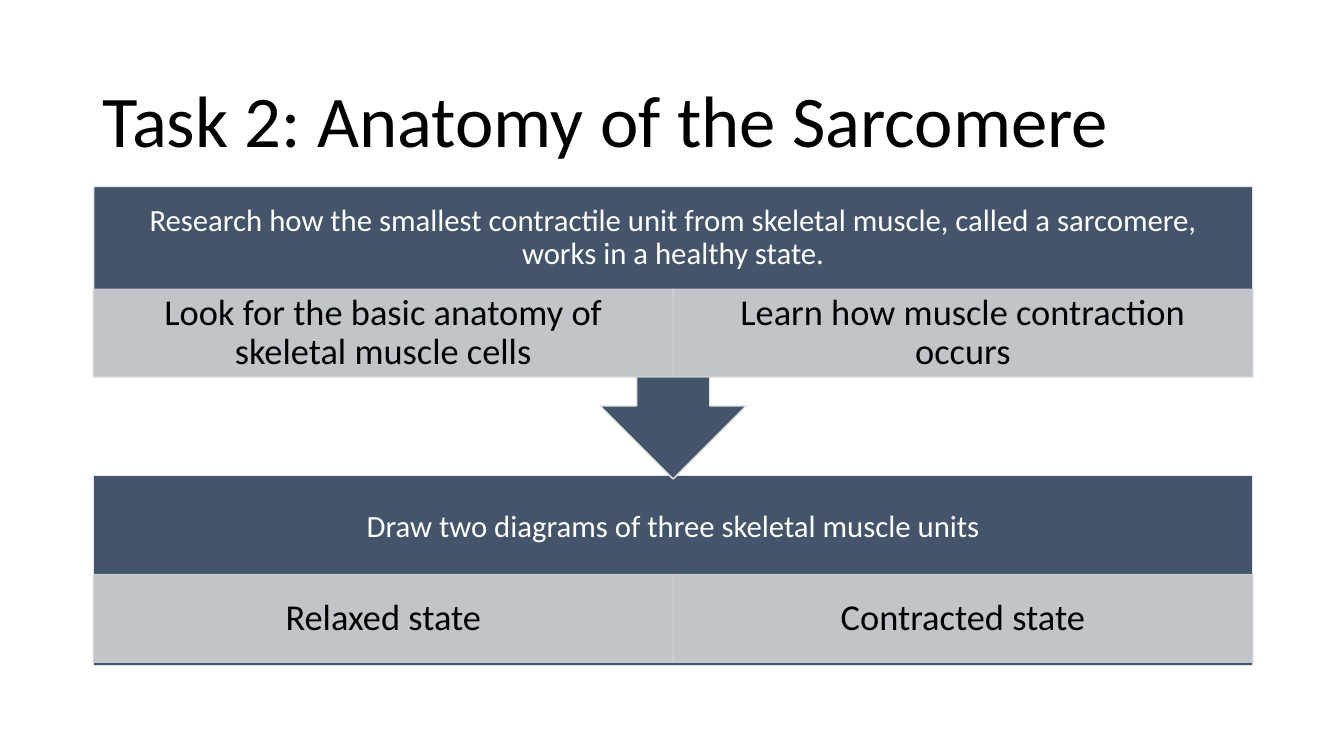
"""Build the sarcomere task slide: two header blocks linked by a down arrow."""
from lxml import etree
from pptx import Presentation
from pptx.dml.color import RGBColor
from pptx.enum.shapes import MSO_SHAPE
from pptx.enum.text import MSO_ANCHOR, PP_ALIGN
from pptx.oxml.ns import qn
from pptx.util import Cm, Pt

RECTANGLE = MSO_SHAPE.RECTANGLE
ARROW_CALLOUT = MSO_SHAPE.UP_ARROW_CALLOUT
MIDDLE = MSO_ANCHOR.MIDDLE
LEFT, CENTER = PP_ALIGN.LEFT, PP_ALIGN.CENTER

BLACK = RGBColor(0x00, 0x00, 0x00)
WHITE = RGBColor(0xFF, 0xFF, 0xFF)
SLATE = RGBColor(0x44, 0x54, 0x6A)
PALE = RGBColor(0xE7, 0xE6, 0xE6)
GREY = RGBColor(0xCF, 0xD1, 0xD4)

BLOCK_LEFT, BLOCK_WIDTH = 2.36, 29.21
HEADER_HEIGHT, CELL_HEIGHT = 2.59, 2.21


class TaskPage:
    def __init__(self, deck, font="Calibri"):
        self.font = font
        self.page = deck.slides.add_slide(deck.slide_layouts[6])

    def set_words(self, box, words, size, color, align, insets):
        frame = box.text_frame
        frame.text = words
        frame.word_wrap = True
        frame.vertical_anchor = MIDDLE
        frame.margin_left = frame.margin_right = Cm(insets[0])
        frame.margin_top = frame.margin_bottom = Cm(insets[1])
        para = frame.paragraphs[0]
        para.alignment = align
        para.line_spacing = 0.9
        for span in para.runs:
            span.font.name = self.font
            span.font.size = Pt(size)
            span.font.color.rgb = color

    def label(self, words, left, top, width, height, size, color, align, insets):
        box = self.page.shapes.add_textbox(Cm(left), Cm(top), Cm(width), Cm(height))
        self.set_words(box, words, size, color, align, insets)

    def panel(self, kind, left, top, width, height, fill, line):
        shape = self.page.shapes.add_shape(kind, Cm(left), Cm(top), Cm(width), Cm(height))
        shape.shadow.inherit = False
        shape.fill.solid()
        shape.fill.fore_color.rgb = fill
        shape.line.color.rgb = line
        shape.line.width = Pt(1)
        return shape

    def cell(self, words, left, top, width):
        shape = self.panel(RECTANGLE, left, top, width, CELL_HEIGHT, GREY, GREY)
        for color in shape._element.spPr.iter(qn("a:srgbClr")):
            etree.SubElement(color, qn("a:alpha")).set("val", "90000")
        self.set_words(shape, words, 26, BLACK, CENTER, (0.5, 0.1))

    def block(self, kind, top, height, rotation, header, cells_top, cells):
        panel = self.panel(kind, BLOCK_LEFT, top, BLOCK_WIDTH, height, SLATE, PALE)
        panel.rotation = rotation
        self.label(header, BLOCK_LEFT, top, BLOCK_WIDTH, HEADER_HEIGHT,
                   22, WHITE, CENTER, (0.43, 0.43))
        width = BLOCK_WIDTH / len(cells)
        for column, words in enumerate(cells):
            self.cell(words, BLOCK_LEFT + column * width, cells_top, width)


def main():
    deck = Presentation()
    deck.slide_width, deck.slide_height = Cm(33.87), Cm(19.05)
    task = TaskPage(deck)
    task.label("Task 2: Anatomy of the Sarcomere", 2.33, 1.55, 29.21, 3.15,
               52, BLACK, LEFT, (0.25, 0.13))
    task.block(RECTANGLE, 11.99, 4.78, 0,
               "Draw two diagrams of three skeletal muscle units",
               14.48, ["Relaxed state", "Contracted state"])
    task.block(ARROW_CALLOUT, 4.7, 7.37, 180,
               "Research how the smallest contractile unit from skeletal muscle, "
               "called a sarcomere, works in a healthy state.",
               7.29, ["Look for the basic anatomy of skeletal muscle cells",
                      "Learn how muscle contraction occurs"])
    deck.save("out.pptx")


if __name__ == "__main__":
    main()
